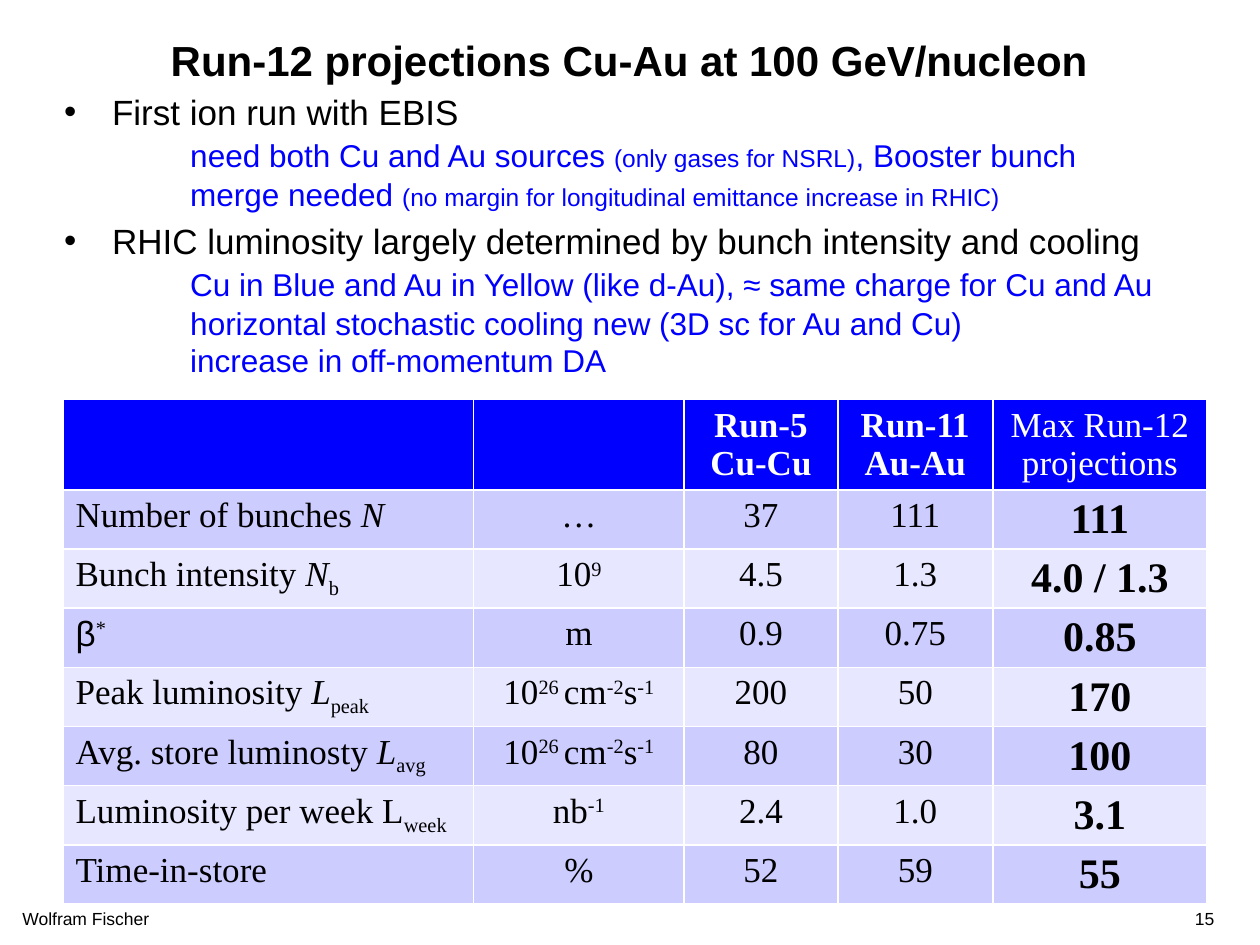
from pptx import Presentation
from pptx import util as u
from pptx.dml.color import RGBColor
from pptx.enum import text
from pptx.oxml.ns import qn
from lxml import etree

BLACK = RGBColor(0x00, 0x00, 0x00)
WHITE = RGBColor(0xFF, 0xFF, 0xFF)
BLUE = RGBColor(0x00, 0x00, 0xFF)
BAND_DARK = RGBColor(0xCC, 0xCC, 0xFF)
BAND_LIGHT = RGBColor(0xE7, 0xE7, 0xFF)
SANS, SERIF = "Arial", "Times New Roman"
CENTER = text.PP_ALIGN.CENTER
BASELINES = {"sub": "-25000", "sup": "30000"}


class SlideBuilder:
    """Holds the current slide and the style of its elements."""

    def __init__(self, deck):
        self.page = deck.slides.add_slide(deck.slide_layouts[1])

    def place(self, box, left, top, width, height):
        box.left, box.top = u.Inches(left), u.Inches(top)
        box.width, box.height = u.Inches(width), u.Inches(height)
        frame = box.text_frame
        frame.word_wrap = True
        frame.auto_size = text.MSO_AUTO_SIZE.NONE
        return frame

    def span(self, para, words, size, font=SANS, color=BLACK, bold=False, mark=""):
        """Add one run; mark is "i", "sub", "sup" or empty."""
        run = para.add_run()
        run.text = words
        run.font.name, run.font.size = font, u.Pt(size)
        run.font.bold, run.font.italic = bold, mark == "i"
        run.font.color.rgb = color
        if mark in BASELINES:
            run.font._element.set("baseline", BASELINES[mark])

    def title(self, words, *place):
        frame = self.place(self.page.shapes.title, *place)
        frame.vertical_anchor = text.MSO_ANCHOR.MIDDLE
        para = frame.paragraphs[0]
        para.alignment = CENTER
        self.span(para, words, 24, bold=True)

    def bullets(self, items, *place):
        """Each item is a heading and its indented lines of (words, size) runs."""
        frame = self.place(self.page.placeholders[1], *place)
        for number, (heading, lines) in enumerate(items):
            para = frame.add_paragraph() if number else frame.paragraphs[0]
            props = para._p.get_or_add_pPr()
            props.set("marL", str(u.Inches(0.38)))
            props.set("indent", str(-u.Inches(0.38)))
            etree.SubElement(props, qn("a:buChar")).set("char", "•")
            stops = etree.SubElement(props, qn("a:tabLst"))
            stop = etree.SubElement(stops, qn("a:tab"))
            stop.set("pos", str(u.Inches(1)))
            stop.set("algn", "l")
            para.space_before = u.Pt(4 if number else 0)
            self.span(para, heading, 20)
            for order, line in enumerate(lines):
                para.add_line_break()
                self.span(para, "\t", 18 if order else 20, color=BLUE)
                for words, size in line:
                    self.span(para, words, size, color=BLUE)

    def label(self, words, *place, align=None):
        box = self.page.shapes.add_textbox(0, 0, 0, 0)
        para = self.place(box, *place).paragraphs[0]
        para.alignment = align
        self.span(para, words, 10)

    def table(self, header, rows, widths, left, top, head_height, row_height):
        height = head_height + row_height * len(rows)
        grid = self.page.shapes.add_table(
            len(rows) + 1, len(widths), u.Inches(left), u.Inches(top),
            u.Inches(sum(widths)), u.Inches(height)).table
        for column, width in zip(grid.columns, widths):
            column.width = u.Inches(width)
        for number, row in enumerate(grid.rows):
            row.height = u.Inches(row_height if number else head_height)
        last = len(widths) - 1
        for number, words in enumerate(header):
            cell = self.fill(grid.cell(0, number), BLUE)
            for order, line in enumerate(words):
                para = cell.text_frame.paragraphs[0]
                if order and number == last:
                    para = cell.text_frame.add_paragraph()
                elif order:
                    para.add_line_break()
                para.alignment = CENTER
                self.span(para, line, 20, SERIF, WHITE, bold=number < last)
        for r, row in enumerate(rows, 1):
            for c, runs in enumerate(row):
                cell = self.fill(grid.cell(r, c), BAND_DARK if r % 2 else BAND_LIGHT)
                para = cell.text_frame.paragraphs[0]
                para.alignment = CENTER if c else None
                for words, mark in [(runs, "")] if isinstance(runs, str) else runs:
                    self.span(para, words, 24 if c == last else 20,
                              SANS if words == "β" else SERIF, bold=c == last, mark=mark)

    def fill(self, cell, color):
        cell.fill.solid()
        cell.fill.fore_color.rgb = color
        return cell


def main():
    deck = Presentation()
    deck.slide_width, deck.slide_height = u.Inches(10), u.Inches(7.5)
    slide = SlideBuilder(deck)

    # Title and list
    slide.title("Run-12 projections Cu-Au at 100 GeV/nucleon", 0.41, 0.25, 9.17, 0.45)
    slide.bullets([
        ("First ion run with EBIS", [
            [("need both Cu and Au sources ", 18), ("(only gases for NSRL)", 14),
             (", Booster bunch", 18)],
            [("merge needed ", 18),
             ("(no margin for longitudinal emittance increase in RHIC)", 14)]]),
        ("RHIC luminosity largely determined by bunch intensity and cooling", [
            [("Cu in Blue and Au in Yellow (like d-Au), ≈ same charge for Cu and Au", 18)],
            [("horizontal stochastic cooling new (3D sc for Au and Cu)", 18)],
            [("increase in off-momentum DA", 18)]]),
    ], 0.41, 0.67, 9.17, 6.08)

    # Table of projections
    luminosity_unit = [("10", ""), ("26 ", "sup"), ("cm", ""), ("-2", "sup"),
                       ("s", ""), ("-1", "sup")]
    header = [[], [], ["Run-5", "Cu-Cu"], ["Run-11", "Au-Au"], ["Max Run-12", "projections"]]
    rows = [
        [[("Number of bunches ", ""), ("N", "i")], "…", "37", "111", "111"],
        [[("Bunch intensity ", ""), ("N", "i"), ("b", "sub")],
         [("10", ""), ("9", "sup")], "4.5", "1.3", "4.0 / 1.3"],
        [[("β", ""), ("*", "sup")], "m", "0.9", "0.75", "0.85"],
        [[("Peak luminosity ", ""), ("L", "i"), ("peak", "sub")],
         luminosity_unit, "200", "50", "170"],
        [[("Avg. store luminosty ", ""), ("L", "i"), ("avg", "sub")],
         luminosity_unit, "80", "30", "100"],
        [[("Luminosity per week L", ""), ("week", "sub")],
         [("nb", ""), ("-1", "sup")], "2.4", "1.0", "3.1"],
        ["Time-in-store", "%", "52", "59", "55"],
    ]
    slide.table(header, rows, [3.26, 1.67, 1.22, 1.23, 1.7], 0.5, 3.17, 0.7, 0.47)

    # Footer
    slide.label("Wolfram Fischer", 0.08, 7.16, 1.92, 0.33)
    slide.label("15", 9.31, 7.16, 0.5, 0.33, align=CENTER)

    deck.save("out.pptx")


if __name__ == "__main__":
    main()
